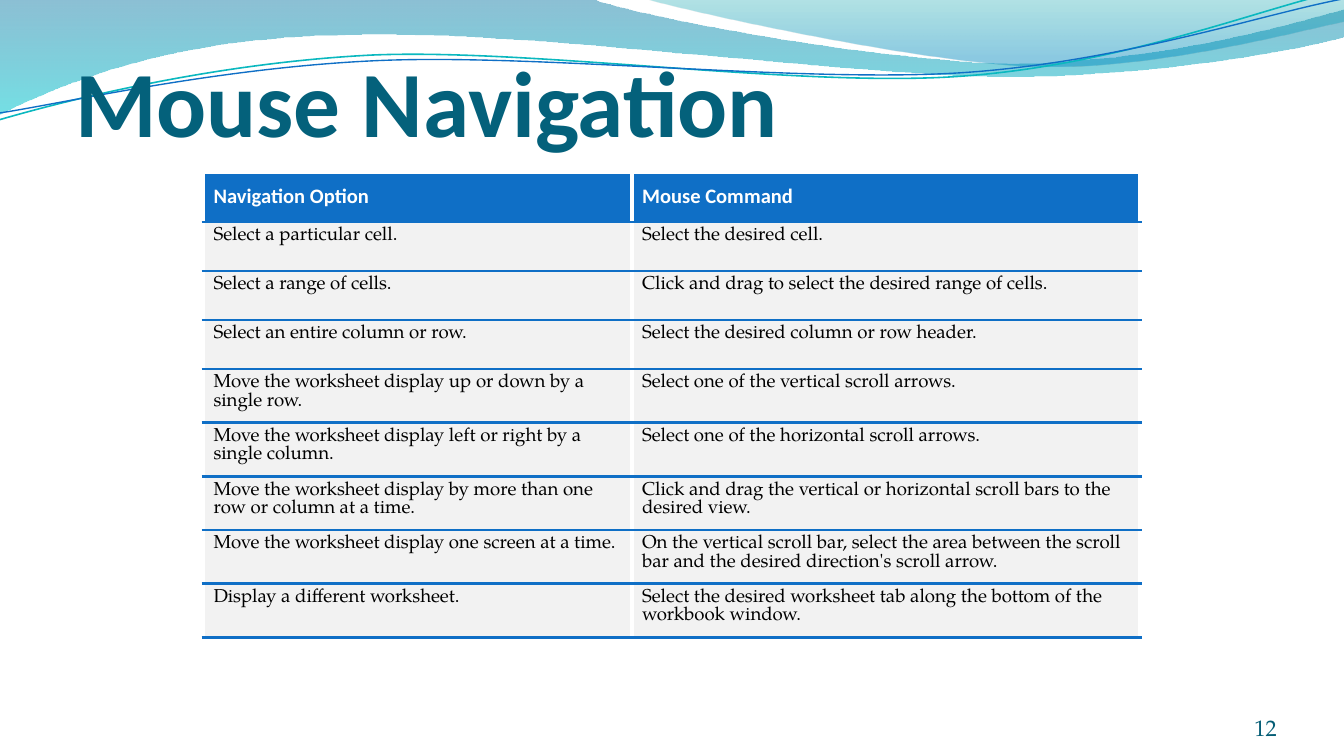
from dataclasses import dataclass
from math import cos, radians, sin
from typing import Any, NamedTuple

from lxml import etree
from pptx import Presentation
from pptx.dml.color import RGBColor
from pptx.enum.text import MSO_ANCHOR, PP_ALIGN
from pptx.oxml.ns import qn
from pptx.util import Pt

LEFT, RIGHT = PP_ALIGN.LEFT, PP_ALIGN.RIGHT
TOP, MIDDLE, BOTTOM = MSO_ANCHOR.TOP, MSO_ANCHOR.MIDDLE, MSO_ANCHOR.BOTTOM
UNITS = 100
TILT = 2.7


class Face(NamedTuple):
    name: str
    size: float
    color: str
    bold: bool = False


@dataclass(frozen=True)
class Theme:
    title: Face = Face("Calibri", 50, "04617B", True)
    head: Face = Face("Calibri", 11, "FFFFFF", True)
    body: Face = Face("TeX Gyre Pagella", 10, "000000")
    number: Face = Face("TeX Gyre Pagella", 12, "045D75")
    blue: str = "0F6FC6"
    teal: str = "0AB8BF"
    white: str = "FFFFFF"
    gray: str = "F2F2F2"


class Stop(NamedTuple):
    place: float
    color: str
    alpha: int


class Edge(NamedTuple):
    color: str
    width: float


class Wave(NamedTuple):
    start: tuple
    legs: list
    stops: tuple = ()
    edge: Edge | None = None
    pivot: tuple = (0, 0)


THEME = Theme()

WAVES = [
    Wave((0, 0), [
        (316.8, -0.7),
        (342.7, 9.4, 478.1, 33.8, 545.8, 33.8),
        (614.2, 33.8, 689.8, 13.7, 720, 5),
        (720.7, 19.4),
        (707.8, 23.8, 626.4, 41, 537.1, 41),
        (447.8, 40.3, 275, 15.1, 185, 18.7),
        (92.9, 19.4, 33.1, 44.6, -0.7, 61.2),
        (0, 0),
    ], stops=(Stop(0, "0074A1", 45), Stop(1, "00C6CF", 55))),
    Wave((344.9, -0.7), [
        (366.5, 5.8, 491, 33.1, 553.7, 35.3),
        (616.3, 37.4, 691.9, 17.3, 720, 11.5),
        (720, 0),
        (344.9, -0.7),
    ], stops=(Stop(0, "00A1A9", 30), Stop(0.8, "008BBF", 45))),
    Wave((0, 64.1), [
        (34.6, 54, 113.8, 33.8, 199.4, 29.5),
        (285.1, 25.9, 426.2, 46.8, 512.6, 41),
        (599.8, 35.3, 676.1, 4.3, 718.6, -5),
    ], edge=Edge(THEME.teal, 0.85), pivot=(359.3, 31.3)),
    Wave((0, 60.5), [
        (33.8, 55.4, 118.1, 36, 203.8, 32.4),
        (290.2, 28.8, 429.8, 44.6, 516.2, 38.9),
        (601.9, 33.1, 677.5, 7.2, 720, -0.7),
    ], edge=Edge(THEME.blue, 0.75), pivot=(359.7, 32)),
]

ROWS = [
    ("Navigation Option", "Mouse Command"),
    ("Select a particular cell.", "Select the desired cell."),
    ("Select a range of cells.",
     "Click and drag to select the desired range of cells."),
    ("Select an entire column or row.",
     "Select the desired column or row header."),
    ("Move the worksheet display up or down by a single row.",
     "Select one of the vertical scroll arrows."),
    ("Move the worksheet display left or right by a single column.",
     "Select one of the horizontal scroll arrows."),
    ("Move the worksheet display by more than one row or column at a time.",
     "Click and drag the vertical or horizontal scroll bars to the desired view."),
    ("Move the worksheet display one screen at a time.",
     "On the vertical scroll bar, select the area between the scroll bar and "
     "the desired direction's scroll arrow."),
    ("Display a different worksheet.",
     "Select the desired worksheet tab along the bottom of the workbook window."),
]
WIDTHS = [229.6, 272.2]
HEIGHTS = [26.8] + [26.3] * 3 + [28.75] * 5
PADS = {"margin_left": Pt(5.4), "margin_right": Pt(5),
        "margin_top": Pt(2.9), "margin_bottom": Pt(2.9)}
FLAT = dict.fromkeys(PADS, Pt(0))


def apply(item: Any, values: dict) -> None:
    for key, value in values.items():
        setattr(item, key, value)


def write(frame: Any, text: str, face: Face, **form: Any) -> None:
    para = frame.paragraphs[0]
    apply(para, form)
    run = para.add_run()
    run.text = text
    apply(run.font, {"name": face.name, "size": Pt(face.size), "bold": face.bold})
    run.font.color.rgb = RGBColor.from_string(face.color)


def turn(dot: tuple, pivot: tuple, angle: float) -> tuple:
    c, s = cos(radians(angle)), sin(radians(angle))
    x, y = dot[0] - pivot[0], dot[1] - pivot[1]
    return (round((pivot[0] + x * c - y * s) * UNITS),
            round((pivot[1] + x * s + y * c) * UNITS))


def bend(shape: Any, legs: list) -> None:
    lines = iter(list(shape.element.iter(qn("a:lnTo"))))
    for leg in legs:
        group = [next(lines) for _ in range(len(leg) // 2)]
        if len(group) == 1:
            continue
        curve = etree.Element(qn("a:cubicBezTo"))
        group[0].addprevious(curve)
        for line in group:
            curve.append(line[0])
            line.getparent().remove(line)


def draw_wave(slide: Any, wave: Wave) -> None:
    angle = TILT if wave.edge else 0
    flat = [wave.start] + [leg[i:i + 2] for leg in wave.legs
                           for i in range(0, len(leg), 2)]
    dots = [turn(dot, wave.pivot, angle) for dot in flat]
    pen = slide.shapes.build_freeform(*dots[0], scale=Pt(1) / UNITS)
    pen.add_line_segments(dots[1:], close=bool(wave.stops))
    shape = pen.convert_to_shape()
    bend(shape, wave.legs)
    shape.shadow.inherit = False
    if wave.edge:
        shape.rotation = 360 - angle
        shape.fill.background()
        shape.line.color.rgb = RGBColor.from_string(wave.edge.color)
        shape.line.width = Pt(wave.edge.width)
        return
    shape.line.fill.background()
    shape.fill.gradient()
    shape.fill.gradient_angle = 270
    for slot, stop in zip(shape.fill.gradient_stops, wave.stops):
        slot.position = stop.place
        slot.color.rgb = RGBColor.from_string(stop.color)
    for tone, stop in zip(shape.element.spPr.iter(qn("a:srgbClr")), wave.stops):
        etree.SubElement(tone, qn("a:alpha"), val=str(stop.alpha * 1000))


def draw_edges(cell: Any, edges: dict[str, Edge]) -> None:
    props = cell._tc.get_or_add_tcPr()
    for spot, (side, edge) in enumerate(edges.items()):
        line = etree.Element(qn(f"a:ln{side}"), w=str(Pt(edge.width)))
        fill = etree.SubElement(line, qn("a:solidFill"))
        etree.SubElement(fill, qn("a:srgbClr"), val=edge.color)
        props.insert(spot, line)


def draw_table(slide: Any) -> None:
    frame = slide.shapes.add_table(len(ROWS), len(WIDTHS), Pt(109), Pt(92.1),
                                   Pt(sum(WIDTHS)), Pt(sum(HEIGHTS)))
    table = frame.table
    table.horz_banding = False
    for col, width in zip(table.columns, WIDTHS):
        col.width = Pt(width)
    side, rule = Edge(THEME.white, 2.25), Edge(THEME.blue, 1.5)
    for r, (row, height) in enumerate(zip(ROWS, HEIGHTS)):
        table.rows[r].height = Pt(height)
        head = r == 0
        form = {} if head else {"line_spacing": Pt(9.9), "space_before": Pt(2)}
        for c, text in enumerate(row):
            cell = table.cell(r, c)
            apply(cell, PADS | {"vertical_anchor": MIDDLE if head else TOP})
            cell.fill.solid()
            cell.fill.fore_color.rgb = RGBColor.from_string(
                THEME.blue if head else THEME.gray)
            write(cell.text_frame, text, THEME.head if head else THEME.body, **form)
            draw_edges(cell, {"L": side, "R": side,
                              "T": side if head else rule, "B": rule})


def main() -> None:
    deck = Presentation()
    apply(deck, {"slide_width": Pt(720), "slide_height": Pt(405)})
    slide = deck.slides.add_slide(deck.slide_layouts[5])
    for wave in WAVES:
        draw_wave(slide, wave)

    box = slide.shapes.add_textbox(Pt(624), Pt(375.4), Pt(60), Pt(21.6))
    apply(box.text_frame, FLAT | {"word_wrap": True, "vertical_anchor": BOTTOM})
    write(box.text_frame, "12", THEME.number, alignment=RIGHT)

    title = slide.shapes.title
    apply(title, {"left": Pt(33), "top": Pt(28.5), "width": Pt(620), "height": Pt(50)})
    title.text_frame.vertical_anchor = MIDDLE
    write(title.text_frame, "Mouse Navigation", THEME.title, alignment=LEFT)
    title.element.getparent().append(title.element)

    draw_table(slide)
    deck.save("out.pptx")


if __name__ == "__main__":
    main()
